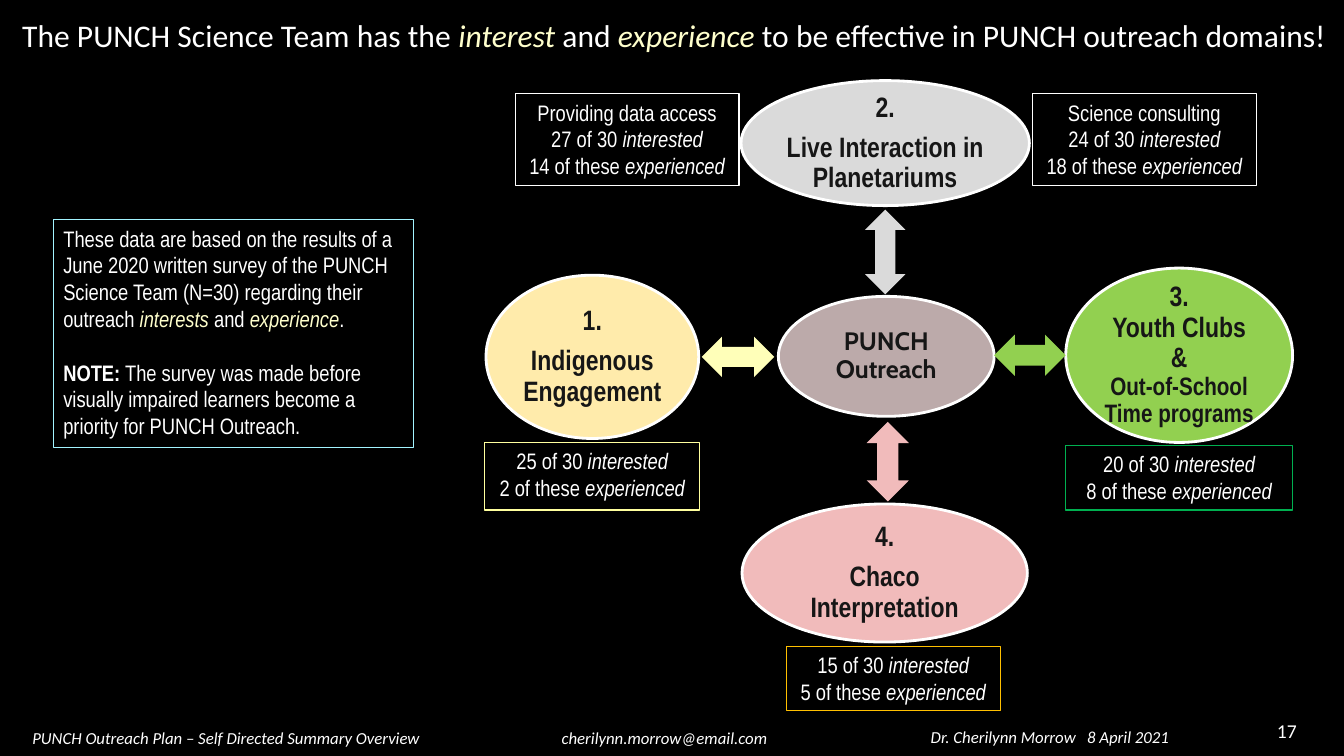
from pptx import Presentation
from pptx.dml.color import RGBColor
from pptx.enum.shapes import MSO_SHAPE
from pptx.enum.text import MSO_ANCHOR, PP_ALIGN
from pptx.util import Inches, Pt

BLACK = RGBColor(0x00, 0x00, 0x00)
WHITE = RGBColor(0xFF, 0xFF, 0xFF)
INK = RGBColor(0x16, 0x16, 0x16)
CREAM = RGBColor(0xFF, 0xFF, 0xCC)
MAUVE = RGBColor(0xBC, 0xAA, 0xAA)
GRAY = RGBColor(0xDA, 0xDA, 0xDA)
GREEN = RGBColor(0x92, 0xD0, 0x50)
PINK = RGBColor(0xF1, 0xBB, 0xBB)
SAND = RGBColor(0xFF, 0xEB, 0xAB)
PALE_YELLOW = RGBColor(0xFF, 0xFF, 0xB9)
YELLOW = RGBColor(0xFF, 0xFF, 0x9E)
ORANGE = RGBColor(0xFF, 0xC0, 0x00)
DARK_GREEN = RGBColor(0x00, 0xB0, 0x50)
CYAN = RGBColor(0xA3, 0xF4, 0xFF)

# In all texts *...* is italic and #...# is bold.
TITLE = ("The PUNCH Science Team has the *interest* and *experience* "
         "to be effective in PUNCH outreach domains!")

# (left, top, width, height), fill, lines, font, sizes, space after each line
DOMAINS = [
    ((7.72, 2.94, 2.14, 1.19), MAUVE, ["PUNCH Outreach"], "Cabin", [18], 0),
    ((7.35, 0.8, 2.86, 1.24), GRAY,
     ["2.", "Live Interaction in Planetariums"], "Arial Narrow", [20, 20], 7),
    ((10.57, 2.66, 2.25, 1.73), GREEN,
     ["3.", "Youth Clubs", "&", "Out-of-School Time programs"],
     "Arial Narrow", [20, 20, 20, 18], 0),
    ((7.36, 5, 2.83, 1.37), PINK,
     ["4.", "Chaco Interpretation"], "Arial Narrow", [20, 20], 7),
    ((4.82, 2.73, 2.11, 1.62), SAND,
     ["1.", "Indigenous Engagement"], "Arial Narrow", [20, 20], 7),
]

# (left, top, length, thickness) before turning, turn in degrees, fill
ARROWS = [
    ((8.36, 2.3, 0.84, 0.4), 270, GRAY),
    ((9.86, 3.32, 0.71, 0.41), 0, GREEN),
    ((8.41, 4.37, 0.79, 0.42), 90, PINK),
    ((6.96, 3.34, 0.72, 0.4), 180, PALE_YELLOW),
]

# frame, line colour, heading, interested, experienced
SURVEY_COUNTS = [
    ((4.81, 4.39, 2.13, 0.67), YELLOW, [], 25, 2),
    ((7.8, 6.41, 2.12, 0.64), ORANGE, [], 15, 5),
    ((10.57, 4.42, 2.25, 0.64), DARK_GREEN, [], 20, 8),
    ((5.11, 0.93, 2.22, 0.91), WHITE, ["Providing data access"], 27, 14),
    ((10.24, 0.93, 2.22, 0.91), WHITE, ["Science consulting"], 24, 18),
]

SURVEY_NOTE = [
    "These data are based on the results of a June 2020 written survey of the "
    "PUNCH Science Team (N=30) regarding their outreach *interests* and *experience*.",
    "#NOTE:# The survey was made before visually impaired learners become a "
    "priority for PUNCH Outreach.",
]

FOOTERS = [
    ((0.27, 7.17, 4.09, 0.3), "*PUNCH Outreach Plan – Self Directed Summary Overview*",
     PP_ALIGN.LEFT),
    ((8.83, 7.16, 3.17, 0.3), "*Dr. Cherilynn Morrow   8 April 2021*", PP_ALIGN.CENTER),
    ((4.85, 7.17, 3.48, 0.3), "*cherilynn.morrow@email.com*", PP_ALIGN.CENTER),
]


def write(box, lines, sizes, font="Arial Narrow", color=WHITE, accent=None, bold=False,
          align=PP_ALIGN.CENTER, anchor=MSO_ANCHOR.TOP, spacing=1.0, gap=0,
          insets=(0.1, 0.05), wrap=True):
    """Fill a shape with marked-up lines; gap is the points between paragraphs."""
    frame = box.text_frame
    frame.word_wrap = wrap
    frame.vertical_anchor = anchor
    frame.margin_left = frame.margin_right = Inches(insets[0])
    frame.margin_top = frame.margin_bottom = Inches(insets[1])
    for number, (line, size) in enumerate(zip(lines, sizes)):
        para = frame.add_paragraph() if number else frame.paragraphs[0]
        para.alignment = align
        para.line_spacing = spacing
        para.space_before = Pt(gap if number else 0)
        para.space_after = Pt(0)
        for strong, part in enumerate(line.split("#")):
            for slanted, text in enumerate(part.split("*")):
                if not text:
                    continue
                span = para.add_run()
                span.text = text
                span.font.name = font
                span.font.size = Pt(size)
                span.font.bold = bold or strong % 2 == 1
                span.font.italic = slanted % 2 == 1
                span.font.color.rgb = accent if accent and slanted % 2 else color


def add_box(page, kind, frame, fill=None, line=None, weight=0.75):
    box = page.shapes.add_shape(kind, *map(Inches, frame))
    box.shadow.inherit = False
    if fill is None:
        box.fill.background()
    else:
        box.fill.solid()
        box.fill.fore_color.rgb = fill
    if line is None:
        box.line.fill.background()
    else:
        box.line.color.rgb = line
        box.line.width = Pt(weight)
    return box


def main():
    deck = Presentation()
    deck.slide_width, deck.slide_height = Inches(13.33), Inches(7.5)
    page = deck.slides.add_slide(deck.slide_layouts[5])
    page.background.fill.solid()
    page.background.fill.fore_color.rgb = BLACK

    title = page.shapes.title
    title.left, title.top = Inches(0.12), Inches(0.11)
    title.width, title.height = Inches(13.2), Inches(0.48)
    write(title, [TITLE], [22.5], font="Calibri", accent=CREAM,
          align=PP_ALIGN.LEFT, wrap=False)

    for frame, fill, lines, font, sizes, gap in DOMAINS:
        domain = add_box(page, MSO_SHAPE.OVAL, frame, fill, WHITE, 2)
        write(domain, lines, sizes, font=font, color=INK, bold=True, spacing=0.9,
              gap=gap, anchor=MSO_ANCHOR.MIDDLE, insets=(0.03, 0.03))

    for frame, turn, fill in ARROWS:
        arrow = add_box(page, MSO_SHAPE.LEFT_RIGHT_ARROW, frame, fill)
        arrow.rotation = turn

    for frame, line, heading, interested, experienced in SURVEY_COUNTS:
        counts = heading + [f"{interested} of 30 *interested*",
                            f"{experienced} of these *experienced*"]
        write(add_box(page, MSO_SHAPE.RECTANGLE, frame, line=line),
              counts, [16] * len(counts))

    note = add_box(page, MSO_SHAPE.RECTANGLE, (0.53, 2.18, 3.57, 2.26), line=CYAN)
    write(note, SURVEY_NOTE, [16, 16], accent=CREAM, align=PP_ALIGN.LEFT, gap=19)

    for frame, text, align in FOOTERS:
        write(add_box(page, MSO_SHAPE.RECTANGLE, frame, BLACK), [text], [12],
              font="Calibri", align=align, insets=(0.05, 0.05))

    page_number = page.shapes.add_textbox(*map(Inches, (12.47, 7.08, 0.49, 0.3)))
    write(page_number, ["17"], [14], font="Calibri", align=PP_ALIGN.RIGHT)

    deck.save("out.pptx")


if __name__ == "__main__":
    main()
